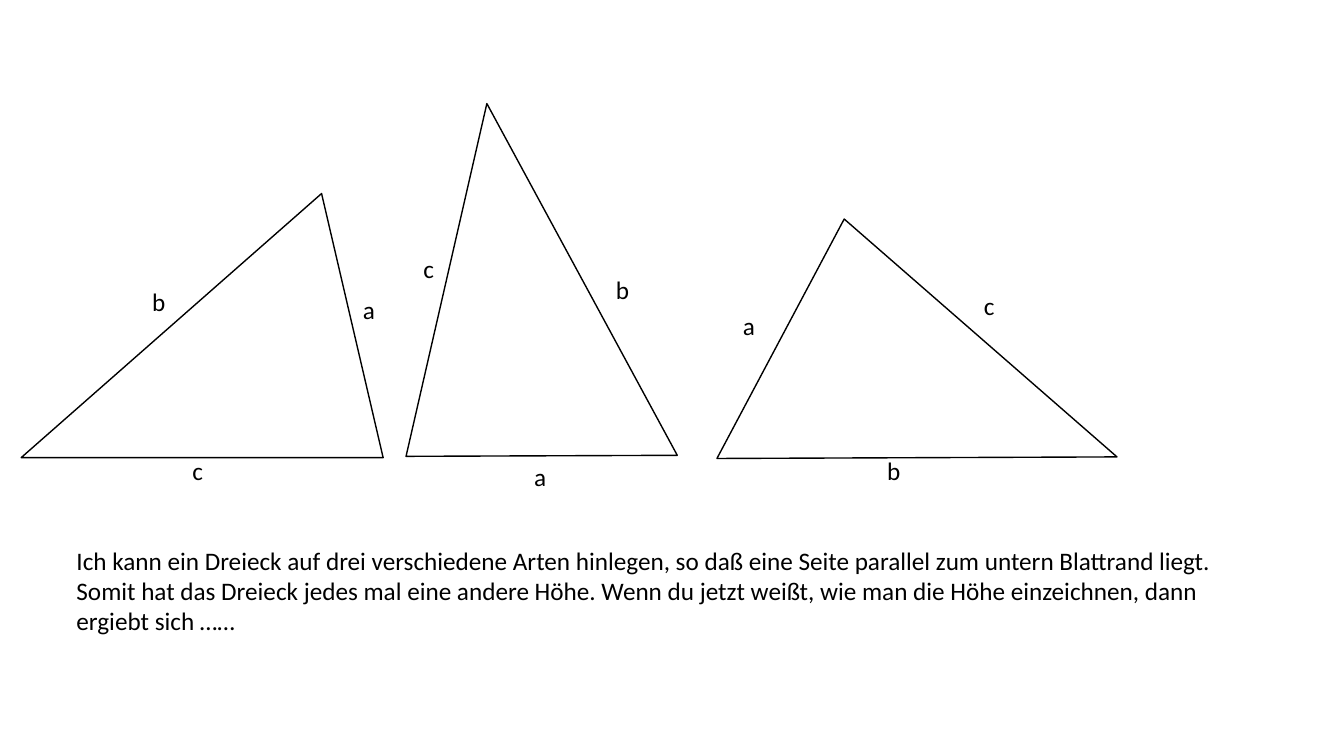
from pptx import Presentation
from pptx.dml.color import RGBColor
from pptx.enum.shapes import MSO_SHAPE as Shape
from pptx.util import Inches, Pt

# Content: each triangle is the same one, turned onto another side
TRIANGLE_SIZE = (3.59, 2.62)
APEX = 0.83
# (left, top, rotation, side labels as (name, left, top, width))
TRIANGLES = [
    (0.21, 1.92, 0, [("c", 1.81, 4.47, 1.03), ("b", 1.41, 2.79, 0.4), ("a", 3.5, 2.87, 0.4)]),
    (3.91, 1.76, 102.9, [("b", 6.01, 2.67, 0.4), ("a", 5.2, 4.53, 0.4), ("c", 4.1, 2.46, 1.03)]),
    (7.07, 3.03, 221.1, [("a", 7.27, 3.03, 0.4), ("b", 8.7, 4.47, 0.4), ("c", 9.66, 2.83, 1.03)]),
]
EXPLANATION = (
    "Ich kann ein Dreieck auf drei verschiedene Arten hinlegen, so daß eine Seite "
    "parallel zum untern Blattrand liegt. Somit hat das Dreieck jedes mal eine andere "
    "Höhe. Wenn du jetzt weißt, wie man die Höhe einzeichnen, dann ergiebt sich ……"
)
BLACK, WHITE = "000000", "FFFFFF"


def paint(color_format, hex_color):
    color_format.rgb = RGBColor.from_string(hex_color)


def add_triangle(slide, left, top, rotation):
    triangle = slide.shapes.add_shape(
        Shape.ISOSCELES_TRIANGLE, *map(Inches, (left, top, *TRIANGLE_SIZE)))
    triangle.adjustments[0] = APEX
    triangle.rotation = rotation
    triangle.shadow.inherit = False
    triangle.fill.solid()
    paint(triangle.fill.fore_color, WHITE)
    paint(triangle.line.color, BLACK)
    triangle.line.width = Pt(1)


def add_text(slide, text, left, top, width, height=0.4):
    frame = slide.shapes.add_textbox(*map(Inches, (left, top, width, height))).text_frame
    frame.word_wrap = True
    frame.text = text
    font = frame.paragraphs[0].runs[0].font
    font.name, font.size = "Calibri", Pt(18)
    paint(font.color, BLACK)


def main():
    prs = Presentation()
    prs.slide_width, prs.slide_height = Inches(13.33), Inches(7.5)
    slide = prs.slides.add_slide(prs.slide_layouts[6])

    # Triangles first, so that no fill covers a label
    for left, top, rotation, _ in TRIANGLES:
        add_triangle(slide, left, top, rotation)

    # Side labels
    for *_, sides in TRIANGLES:
        for side in sides:
            add_text(slide, *side)

    # Explanation
    add_text(slide, EXPLANATION, 0.66, 5.36, 11.89, 1.01)

    prs.save("out.pptx")


if __name__ == "__main__":
    main()
